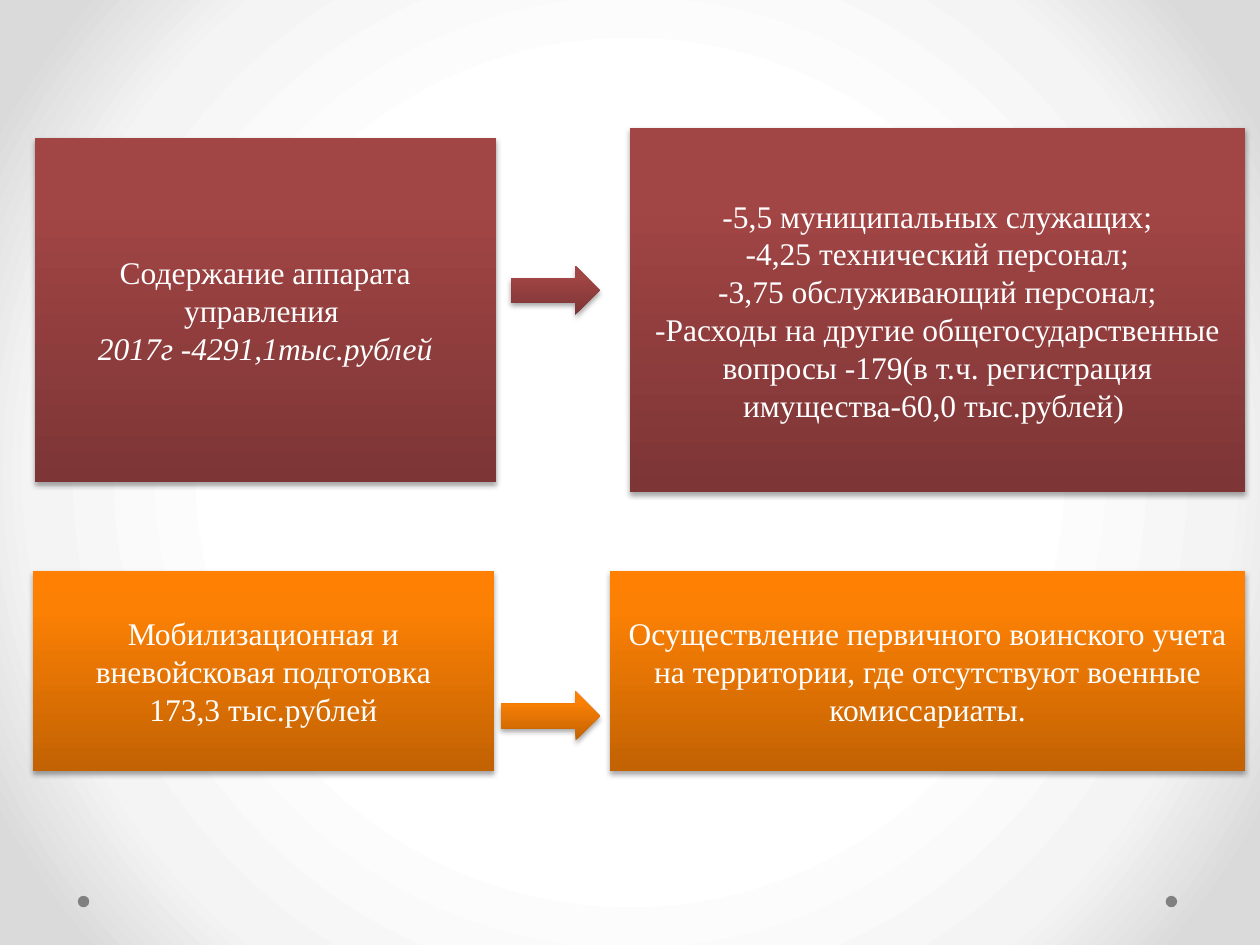
from dataclasses import dataclass

from lxml.etree import SubElement
from pptx import Presentation
from pptx.dml.color import RGBColor
from pptx.enum.shapes import MSO_SHAPE
from pptx.enum.text import MSO_ANCHOR, PP_ALIGN
from pptx.oxml.ns import qn
from pptx.util import Cm, Pt


@dataclass(frozen=True)
class Theme:
    font: str = "Times New Roman"
    size: int = 18
    text: str = "FFFFFF"
    dot: str = "808080"
    back: tuple = ((50, "FFFFFF"), (76, "F4F4F4"), (92, "DADADA"))
    red: tuple = ((0, "7D3535"), (80, "A24545"), (100, "A44343"))
    orange: tuple = ((0, "C26203"), (80, "FB8004"), (100, "FF8002"))


theme = Theme()


def paint(item, fill, stops, radial=False):
    """Fill with a gradient that runs upward, or outward from the centre."""
    fill.gradient()
    grad = item.find(".//" + qn("a:gradFill"))
    for child in list(grad):
        grad.remove(child)
    group = SubElement(grad, qn("a:gsLst"))
    for place, color in stops:
        stop = SubElement(group, qn("a:gs"), pos=str(place * 1000))
        SubElement(stop, qn("a:srgbClr"), val=color)
    if radial:
        way = SubElement(grad, qn("a:path"), path="circle")
        SubElement(way, qn("a:fillToRect"), l="50000", t="50000", r="50000", b="50000")
    else:
        SubElement(grad, qn("a:lin"), ang="16200000", scaled="0")


def block(kind, place, stops):
    """Add a gradient shape with a soft shadow below it."""
    shape = slide.shapes.add_shape(kind, *map(Cm, place))
    paint(shape._element, shape.fill, stops)
    shape.line.fill.background()
    shape.shadow.inherit = False
    effects = shape._element.spPr.find(qn("a:effectLst"))
    shade = SubElement(effects, qn("a:outerShdw"), blurRad=str(Pt(3.1)),
                       dist=str(Pt(1.8)), dir="5400000", rotWithShape="0")
    color = SubElement(shade, qn("a:srgbClr"), val="000000")
    SubElement(color, qn("a:alpha"), val="35000")
    return shape


deck = Presentation()
deck.slide_width, deck.slide_height = Cm(25.4), Cm(19.05)
slide = deck.slides.add_slide(deck.slide_layouts[6])
paint(slide._element, slide.background.fill, theme.back, radial=True)

# Footer dots
for left in (23.5, 1.57):
    dot = slide.shapes.add_shape(MSO_SHAPE.OVAL, Cm(left), Cm(18.06), Cm(0.23), Cm(0.23))
    dot.fill.solid()
    dot.fill.fore_color.rgb = RGBColor.from_string(theme.dot)
    dot.line.fill.background()
    dot.shadow.inherit = False

# Spending items on the left, what they cover on the right
boxes = [
    ((0.7, 2.78, 9.3, 6.93), theme.red,
     ["Содержание аппарата управления ", "2017г -4291,1тыс.рублей"]),
    ((0.66, 11.51, 9.3, 4.04), theme.orange,
     ["Мобилизационная и вневойсковая подготовка", "173,3 тыс.рублей"]),
    ((12.7, 2.58, 12.4, 7.34), theme.red,
     ["-5,5 муниципальных служащих;",
      "-4,25 технический персонал;",
      "-3,75 обслуживающий персонал;",
      "-Расходы на другие общегосударственные вопросы -179"
      "(в т.ч. регистрация имущества-60,0 тыс.рублей) "]),
    ((12.3, 11.51, 12.8, 4.04), theme.orange,
     ["Осуществление первичного воинского учета на территории, "
      "где отсутствуют военные комиссариаты."]),
]
for place, stops, lines in boxes:
    frame = block(MSO_SHAPE.RECTANGLE, place, stops).text_frame
    frame.word_wrap = True
    frame.vertical_anchor = MSO_ANCHOR.MIDDLE
    for i, line in enumerate(lines):
        para = frame.add_paragraph() if i else frame.paragraphs[0]
        para.alignment = PP_ALIGN.CENTER
        run = para.add_run()
        run.text = line
        run.font.name = theme.font
        run.font.size = Pt(theme.size)
        run.font.color.rgb = RGBColor.from_string(theme.text)
        if line.startswith("2017г"):
            run.font.italic = True

# Arrows from item to detail
for place, stops in (((10.31, 5.36, 1.78, 0.99), theme.red),
                     ((10.1, 13.94, 2, 0.99), theme.orange)):
    block(MSO_SHAPE.RIGHT_ARROW, place, stops)

deck.save("out.pptx")
